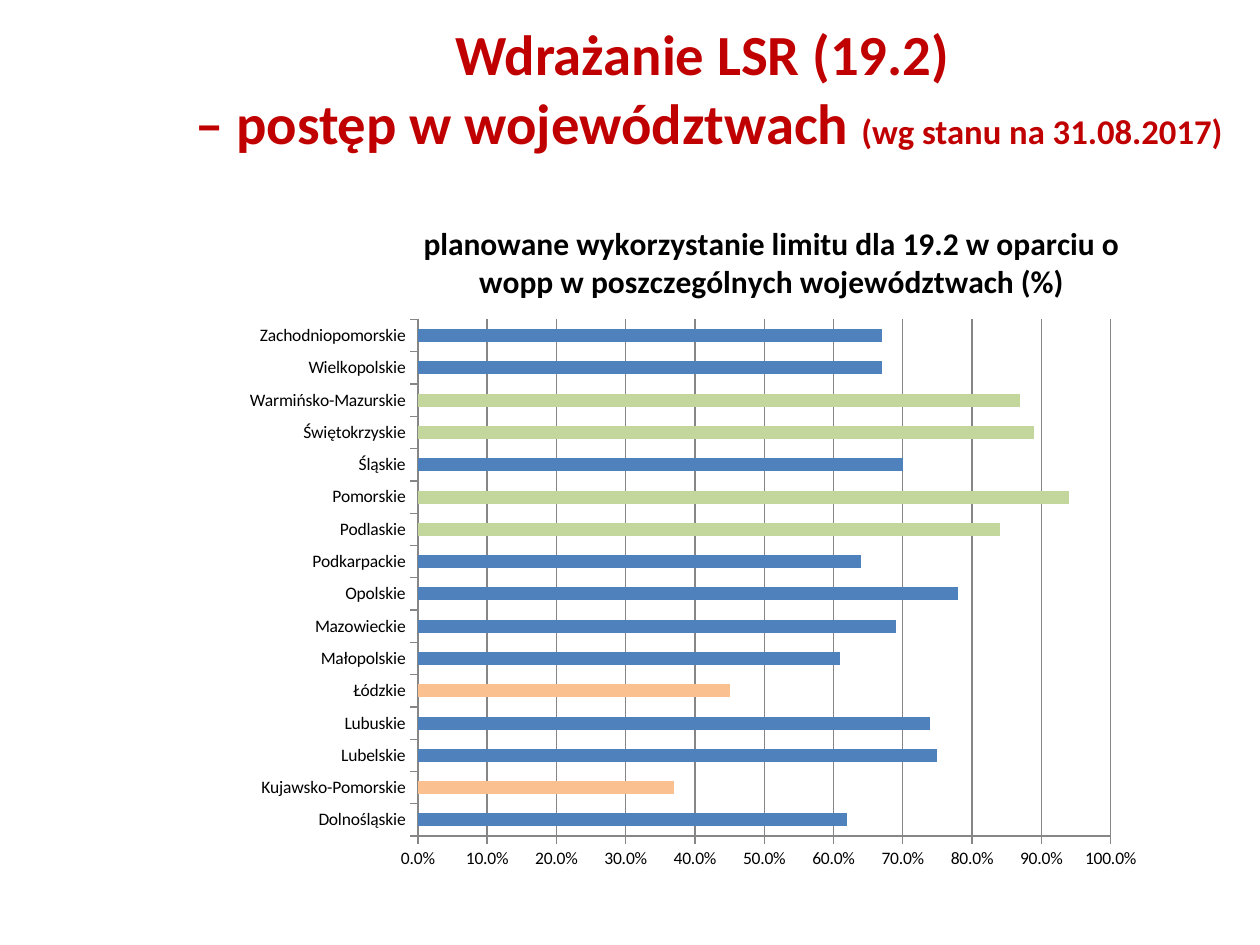
from lxml import etree
from pptx import Presentation
from pptx.chart.data import CategoryChartData as ChartData
from pptx.dml.color import RGBColor
from pptx.enum.chart import XL_CHART_TYPE as Kind, XL_TICK_MARK as Tick
from pptx.enum.text import MSO_ANCHOR as Anchor, MSO_AUTO_SIZE as Fit, PP_ALIGN as Align
from pptx.oxml.ns import qn
from pptx.util import Cm, Pt

RED = RGBColor(0xC0, 0x00, 0x00)
BLACK = RGBColor(0x00, 0x00, 0x00)
GREY = RGBColor(0x86, 0x86, 0x86)
BLUE = RGBColor(0x4F, 0x81, 0xBD)
GREEN = RGBColor(0xC3, 0xD6, 0x9B)
ORANGE = RGBColor(0xFA, 0xC0, 0x90)

LOW, HIGH = 0.5, 0.8
SHARES = {
    "Dolnośląskie": 0.62,
    "Kujawsko-Pomorskie": 0.37,
    "Lubelskie": 0.75,
    "Lubuskie": 0.74,
    "Łódzkie": 0.45,
    "Małopolskie": 0.61,
    "Mazowieckie": 0.69,
    "Opolskie": 0.78,
    "Podkarpackie": 0.64,
    "Podlaskie": 0.84,
    "Pomorskie": 0.94,
    "Śląskie": 0.7,
    "Świętokrzyskie": 0.89,
    "Warmińsko-Mazurskie": 0.87,
    "Wielkopolskie": 0.67,
    "Zachodniopomorskie": 0.67,
}


def assign(item, values):
    for name, value in values.items():
        setattr(item, name, value)


def arrange(part, index, values):
    """Give a chart part a manual layout, as fractions of the chart."""
    for old in part.findall(qn("c:layout")):
        part.remove(old)
    layout = etree.Element(qn("c:layout"))
    manual = etree.SubElement(layout, qn("c:manualLayout"))
    for name, value in values.items():
        etree.SubElement(manual, qn(f"c:{name}")).set("val", str(value))
    part.insert(index, layout)


class Deck:
    face = "Calibri"

    def __init__(self):
        self.show = Presentation()
        assign(self.show, {"slide_width": Cm(25.4), "slide_height": Cm(19.05)})
        self.slide = self.show.slides.add_slide(self.show.slide_layouts[5])

    def style(self, font, size, color, bold=False):
        assign(font, {"name": self.face, "size": Pt(size), "bold": bold})
        font.color.rgb = color

    def title(self, box, runs):
        shape = self.slide.shapes.title
        assign(shape, dict(zip(("left", "top", "width", "height"), map(Cm, box))))
        frame = shape.text_frame
        assign(frame, {"word_wrap": True, "auto_size": Fit.NONE,
                       "vertical_anchor": Anchor.MIDDLE})
        para = frame.paragraphs[0]
        para.alignment = Align.CENTER
        for index, (text, size) in enumerate(runs):
            if index == 1:
                para.add_line_break()
            run = para.add_run()
            run.text = text
            self.style(run.font, size, RED, True)

    def bars(self, box, heading, shares):
        data = ChartData(number_format="0.0%")
        data.categories = list(shares)
        data.add_series("Series 1", list(shares.values()))
        chart = self.slide.shapes.add_chart(
            Kind.BAR_CLUSTERED, *map(Cm, box), data).chart
        chart.has_legend = False
        self.style(chart.font, 10, BLACK)
        self.head(chart, heading)
        self.axes(chart)
        plot = chart.plots[0]
        assign(plot, {"gap_width": 150, "vary_by_categories": False})
        self.paint(plot.series[0], shares.values())
        arrange(chart.element.find(".//" + qn("c:plotArea")), 0, {
            "layoutTarget": "inner", "xMode": "edge", "yMode": "edge",
            "x": 0.2, "y": 0.18, "w": 0.75, "h": 0.75})

    def head(self, chart, text):
        chart.has_title = True
        title = chart.chart_title
        title.include_in_layout = False
        para = title.text_frame.paragraphs[0]
        run = para.add_run()
        run.text = text
        self.style(run.font, 18, BLACK, True)
        arrange(chart.element.find(".//" + qn("c:title")), 1, {
            "xMode": "edge", "yMode": "edge", "x": 0.2, "y": 0.03})

    def axes(self, chart):
        value = chart.value_axis
        assign(value, {"minimum_scale": 0, "maximum_scale": 1, "major_unit": 0.1,
                       "has_major_gridlines": True})
        assign(value.tick_labels, {"number_format": "0.0%",
                                   "number_format_is_linked": False})
        for axis in (value, chart.category_axis):
            axis.major_tick_mark = Tick.OUTSIDE
            axis.format.line.color.rgb = GREY
        value.major_gridlines.format.line.color.rgb = GREY

    def paint(self, series, values):
        """Colour the series blue, and its low and high bars apart."""
        self.fill(series, BLUE)
        for index, share in enumerate(values):
            if share < LOW or share > HIGH:
                self.fill(series.points[index], ORANGE if share < LOW else GREEN)

    def fill(self, item, color):
        item.format.fill.solid()
        item.format.fill.fore_color.rgb = color


def main():
    deck = Deck()
    deck.title((3.38, 0.2, 21.82, 3.12), [
        ("Wdrażanie LSR (19.2) ", 32.4),
        ("– postęp w województwach ", 32.4),
        ("(wg stanu na 31.08.2017)", 19.8),
    ])
    deck.bars((4.7, 3.94, 18.62, 13.89),
              "planowane wykorzystanie limitu dla 19.2 w oparciu o "
              "wopp w poszczególnych województwach (%)", SHARES)
    deck.show.save("out.pptx")


if __name__ == "__main__":
    main()
